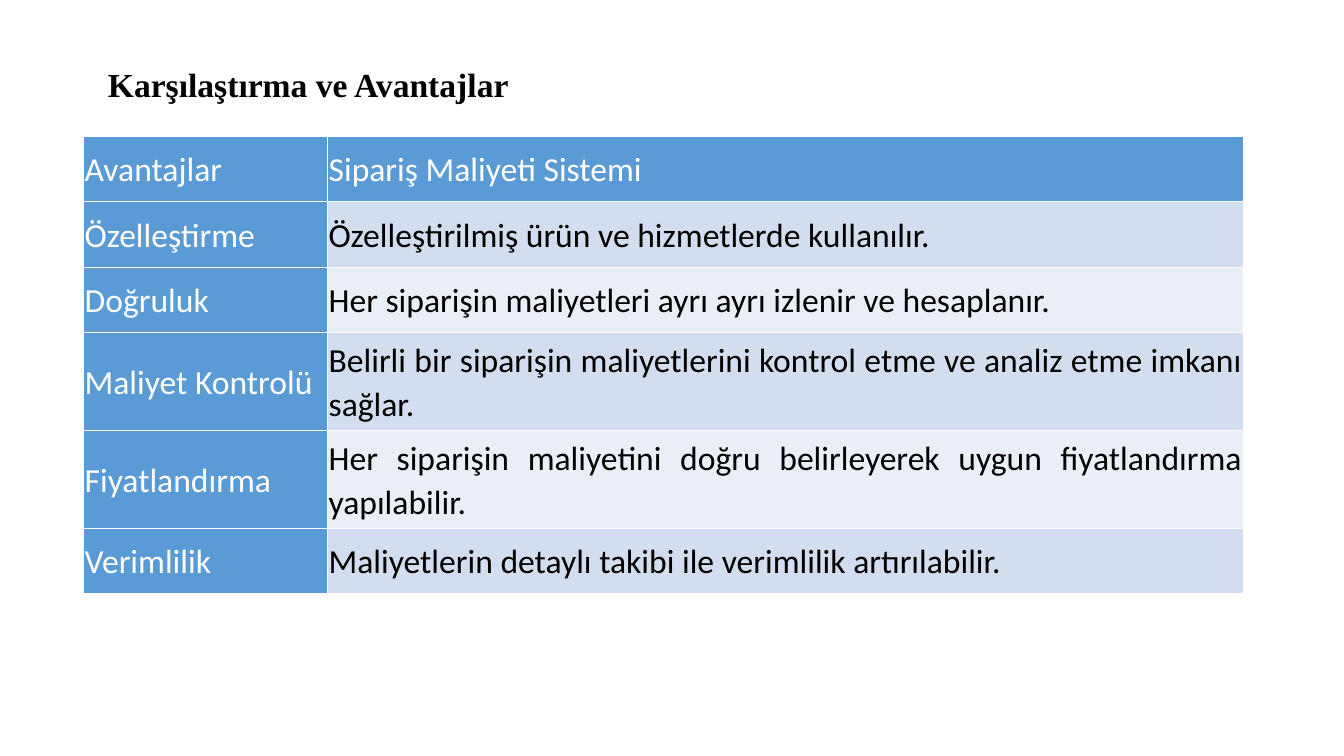
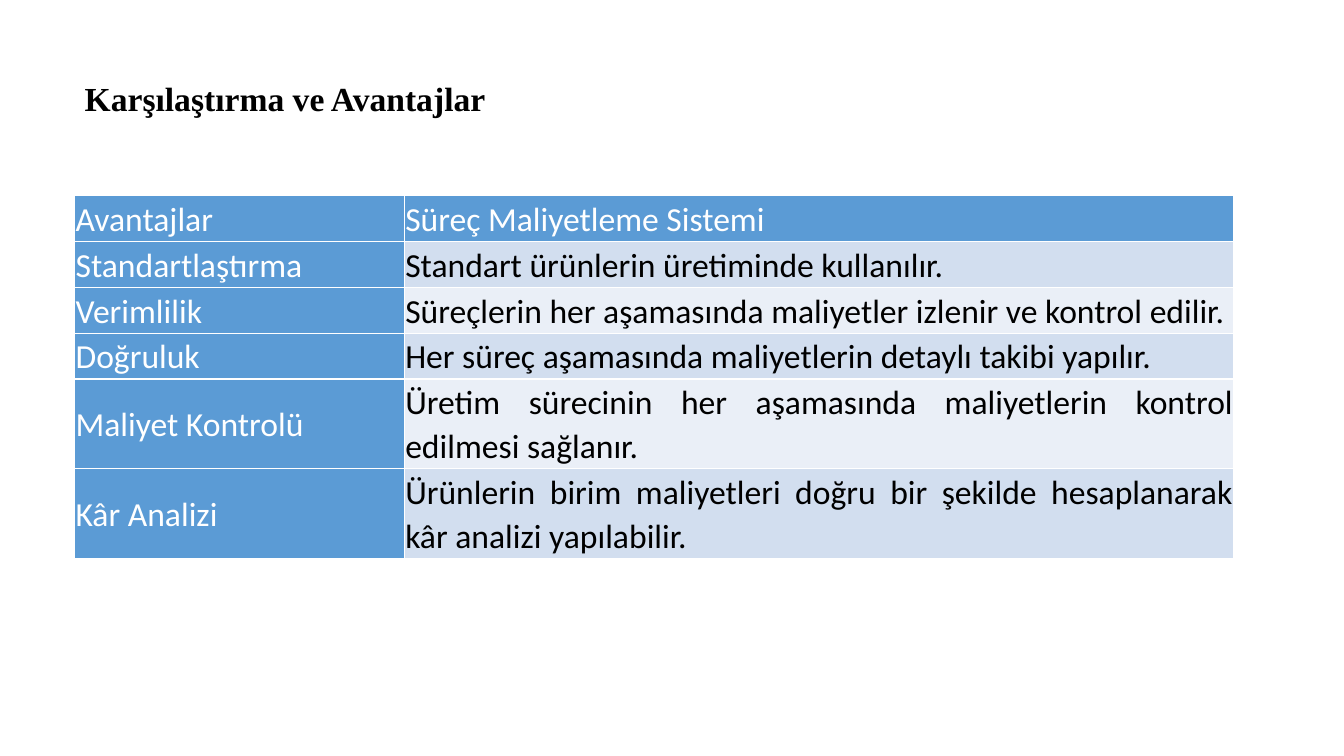
from lxml import etree
from pptx import Presentation
from pptx.dml.color import RGBColor
from pptx.enum.text import MSO_ANCHOR, MSO_AUTO_SIZE, PP_ALIGN
from pptx.oxml.ns import qn
from pptx.util import Inches, Pt

LEFT, JUSTIFY = PP_ALIGN.LEFT, PP_ALIGN.JUSTIFY
TOP, MIDDLE = MSO_ANCHOR.TOP, MSO_ANCHOR.MIDDLE
NO_AUTOFIT = MSO_AUTO_SIZE.NONE
TITLE_ONLY = 5

BLACK, WHITE = "000000", "FFFFFF"
HEADER = "5B9BD5"
BANDS = ("D2DEEF", "EAEFF7")
TITLE_FONT, TABLE_FONT = "Times New Roman", "Calibri"
TEXT_SIZE = 24
CELL_MARGIN = 0.01
LINE_SPACING = 1.07

TITLE = "Karşılaştırma ve Avantajlar"

JOB_COSTING = [
    ("Avantajlar", "Sipariş Maliyeti Sistemi"),
    ("Özelleştirme", "Özelleştirilmiş ürün ve hizmetlerde kullanılır."),
    ("Doğruluk", "Her siparişin maliyetleri ayrı ayrı izlenir ve hesaplanır."),
    ("Maliyet Kontrolü", "Belirli bir siparişin maliyetlerini kontrol etme ve analiz etme imkanı sağlar."),
    ("Fiyatlandırma", "Her siparişin maliyetini doğru belirleyerek uygun fiyatlandırma yapılabilir."),
    ("Verimlilik", "Maliyetlerin detaylı takibi ile verimlilik artırılabilir."),
]
PROCESS_COSTING = [
    ("Avantajlar", "Süreç Maliyetleme Sistemi"),
    ("Standartlaştırma", "Standart ürünlerin üretiminde kullanılır."),
    ("Verimlilik", "Süreçlerin her aşamasında maliyetler izlenir ve kontrol edilir."),
    ("Doğruluk", "Her süreç aşamasında maliyetlerin detaylı takibi yapılır."),
    ("Maliyet Kontrolü", "Üretim sürecinin her aşamasında maliyetlerin kontrol edilmesi sağlanır."),
    ("Kâr Analizi", "Ürünlerin birim maliyetleri doğru bir şekilde hesaplanarak kâr analizi yapılabilir."),
]


def rgb(color):
    return RGBColor.from_string(color)


def format_text(p, font, color, align, bold=False):
    p.alignment = align
    for r in p.runs:
        r.font.name = font
        r.font.size = Pt(TEXT_SIZE)
        r.font.bold = bold
        r.font.color.rgb = rgb(color)


def add_title(s, box):
    title = s.shapes.title
    title.left, title.top, title.width, title.height = (Inches(v) for v in box)
    tf = title.text_frame
    tf.text = TITLE
    tf.word_wrap = True
    tf.auto_size = NO_AUTOFIT
    tf.vertical_anchor = TOP
    format_text(tf.paragraphs[0], TITLE_FONT, BLACK, LEFT, bold=True)


def set_borders(cell, color, width):
    """Draw all four sides; the lines must precede the fill in tcPr."""
    tc_pr = cell._tc.get_or_add_tcPr()
    for i, side in enumerate(("lnL", "lnR", "lnT", "lnB")):
        ln = etree.Element(qn(f"a:{side}"), w=str(Pt(width)))
        fill = etree.SubElement(ln, qn("a:solidFill"))
        etree.SubElement(fill, qn("a:srgbClr"), val=color)
        tc_pr.insert(i, ln)


def fill_cell(cell, text, fill, color):
    cell.text = text
    cell.vertical_anchor = MIDDLE
    cell.margin_left = cell.margin_right = Inches(CELL_MARGIN)
    cell.margin_top = cell.margin_bottom = Inches(CELL_MARGIN)
    cell.fill.solid()
    cell.fill.fore_color.rgb = rgb(fill)
    set_borders(cell, WHITE, 1)
    p = cell.text_frame.paragraphs[0]
    p.line_spacing = LINE_SPACING
    format_text(p, TABLE_FONT, color, JUSTIFY)


def add_comparison(s, left, top, widths, heights, rows):
    """Add a table whose first row and first column are headers."""
    table = s.shapes.add_table(
        len(rows), len(widths), Inches(left), Inches(top),
        Inches(sum(widths)), Inches(sum(heights))).table
    for column, width in zip(table.columns, widths):
        column.width = Inches(width)
    for i, (texts, height) in enumerate(zip(rows, heights)):
        table.rows[i].height = Inches(height)
        for j, text in enumerate(texts):
            is_header = i == 0 or j == 0
            fill = HEADER if is_header else BANDS[(i - 1) % 2]
            fill_cell(table.cell(i, j), text, fill, WHITE if is_header else BLACK)


def add_comparison_slide(prs, title_box, **table):
    s = prs.slides.add_slide(prs.slide_layouts[TITLE_ONLY])
    add_title(s, title_box)
    add_comparison(s, **table)


def main():
    prs = Presentation()
    prs.slide_width, prs.slide_height = Inches(13.33), Inches(7.5)
    add_comparison_slide(
        prs, (0.97, 0.58, 11.37, 0.5), left=0.83, top=1.35, widths=(2.42, 9.08),
        heights=[0.65] * 3 + [0.97] * 2 + [0.65], rows=JOB_COSTING)
    add_comparison_slide(
        prs, (0.74, 0.72, 11.88, 0.5), left=0.74, top=1.94, widths=(3.27, 8.23),
        heights=[0.45] * 4 + [0.87] * 2, rows=PROCESS_COSTING)
    prs.save("out.pptx")


if __name__ == "__main__":
    main()
